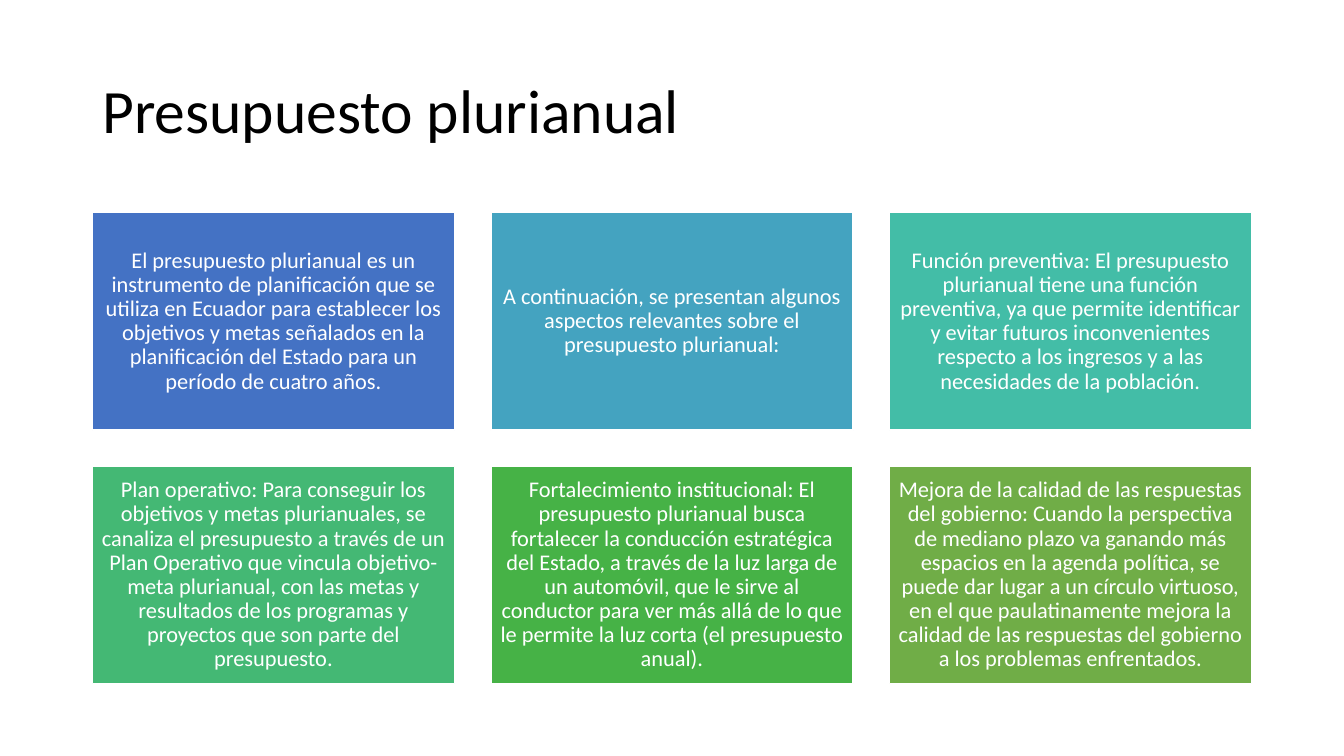
import pptx
import pptx.util
import pptx.dml.color
import pptx.enum.shapes
import pptx.enum.text

Pt = pptx.util.Pt

TITLE = "Presupuesto plurianual"
CARDS = [
    ("blue", "El presupuesto plurianual es un instrumento de planificación que se utiliza en Ecuador para establecer los objetivos y metas señalados en la planificación del Estado para un período de cuatro años."),
    ("sky", "A continuación, se presentan algunos aspectos relevantes sobre el presupuesto plurianual:"),
    ("teal", "Función preventiva: El presupuesto plurianual tiene una función preventiva, ya que permite identificar y evitar futuros inconvenientes respecto a los ingresos y a las necesidades de la población."),
    ("mint", "Plan operativo: Para conseguir los objetivos y metas plurianuales, se canaliza el presupuesto a través de un Plan Operativo que vincula objetivo-meta plurianual, con las metas y resultados de los programas y proyectos que son parte del presupuesto."),
    ("green", "Fortalecimiento institucional: El presupuesto plurianual busca fortalecer la conducción estratégica del Estado, a través de la luz larga de un automóvil, que le sirve al conductor para ver más allá de lo que le permite la luz corta (el presupuesto anual)."),
    ("olive", "Mejora de la calidad de las respuestas del gobierno: Cuando la perspectiva de mediano plazo va ganando más espacios en la agenda política, se puede dar lugar a un círculo virtuoso, en el que paulatinamente mejora la calidad de las respuestas del gobierno a los problemas enfrentados."),
]
COLORS = {
    "black": "000000", "white": "FFFFFF", "blue": "4472C4", "sky": "44A3C0",
    "teal": "43BDA7", "mint": "44B874", "green": "46B246", "olive": "70AD47",
}
FONT = "Calibri"
COLUMNS = 3
LEFT, CONTENT_WIDTH = 66, 828
CARDS_TOP = 152
CARD_WIDTH = CONTENT_WIDTH / 3.2
CARD_HEIGHT = CARD_WIDTH * 0.6
GAP = CARD_WIDTH * 0.1


def color(name):
    return pptx.dml.color.RGBColor.from_string(COLORS[name])


def write(shape, text, size, color_name, alignment, inset_x, inset_y):
    frame = shape.text_frame
    frame.word_wrap = True
    frame.vertical_anchor = pptx.enum.text.MSO_ANCHOR.MIDDLE
    frame.margin_left = frame.margin_right = Pt(inset_x)
    frame.margin_top = frame.margin_bottom = Pt(inset_y)
    paragraph = frame.paragraphs[0]
    paragraph.alignment = alignment
    paragraph.line_spacing = 0.9
    run = paragraph.add_run()
    run.text = text
    run.font.name = FONT
    run.font.size = Pt(size)
    run.font.color.rgb = color(color_name)


def add_card(slide, index, fill, text):
    row, column = divmod(index, COLUMNS)
    card = slide.shapes.add_shape(
        pptx.enum.shapes.MSO_SHAPE.RECTANGLE,
        Pt(LEFT + column * (CARD_WIDTH + GAP)),
        Pt(CARDS_TOP + row * (CARD_HEIGHT + GAP)),
        Pt(CARD_WIDTH), Pt(CARD_HEIGHT))
    card.shadow.inherit = False
    card.fill.solid()
    card.fill.fore_color.rgb = color(fill)
    card.line.color.rgb = color("white")
    card.line.width = Pt(1)
    write(card, text, 16, "white", pptx.enum.text.PP_ALIGN.CENTER, 4.8, 4.8)


def main():
    presentation = pptx.Presentation()
    presentation.slide_width, presentation.slide_height = Pt(960), Pt(540)
    slide = presentation.slides.add_slide(presentation.slide_layouts[6])
    title = slide.shapes.add_textbox(Pt(LEFT), Pt(28.75), Pt(CONTENT_WIDTH), Pt(104.4))
    write(title, TITLE, 44, "black", pptx.enum.text.PP_ALIGN.LEFT, 7.2, 3.6)
    for index, (fill, text) in enumerate(CARDS):
        add_card(slide, index, fill, text)
    presentation.save("out.pptx")


if __name__ == "__main__":
    main()
